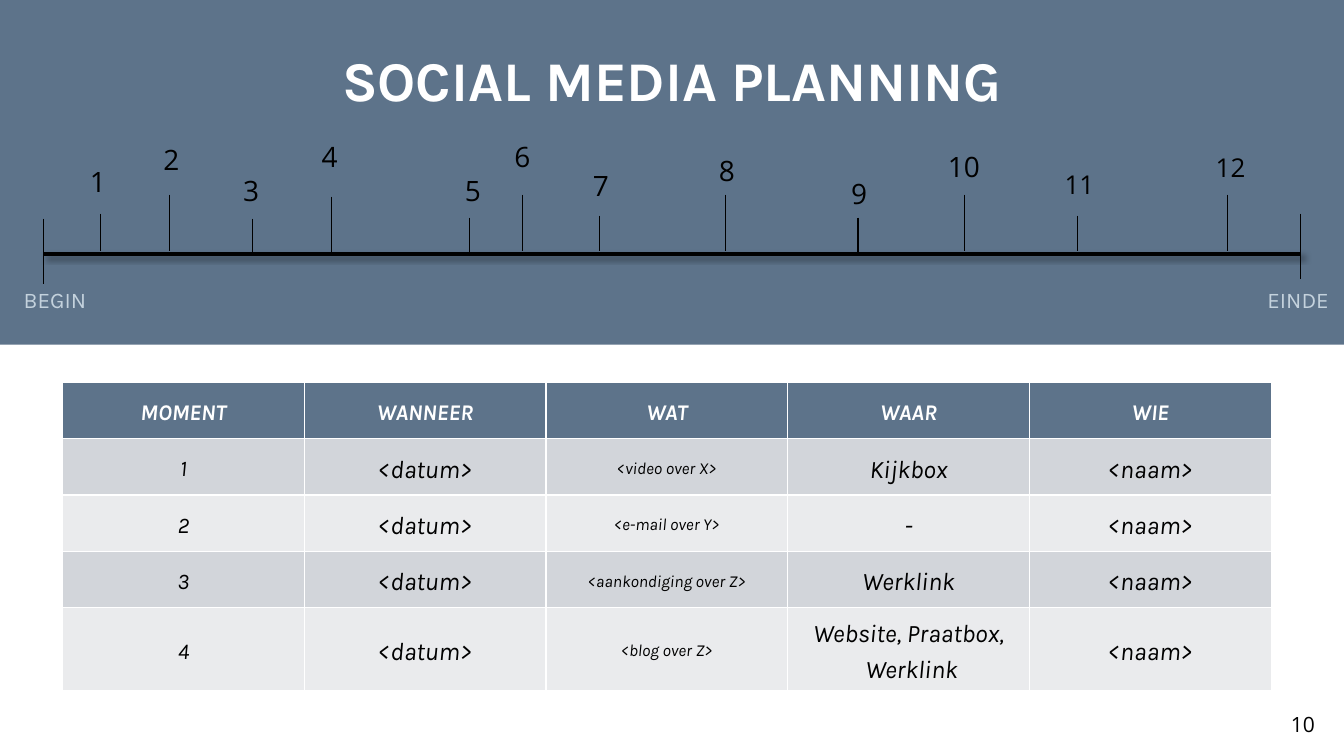
from lxml import etree
from pptx import Presentation
from pptx.dml.color import RGBColor
from pptx.enum.shapes import MSO_CONNECTOR, MSO_SHAPE
from pptx.enum.text import MSO_ANCHOR, PP_ALIGN
from pptx.oxml import parse_xml
from pptx.oxml.ns import nsdecls, qn
from pptx.util import Inches, Pt

SLATE, WHITE, BLACK, PALE = "5D738A", "FFFFFF", "000000", "C4D2DD"
ROW_FILLS = ["D2D5DA", "EAEBED"]
TITLE = "SOCIAL MEDIA PLANNING"
AXIS_Y, AXIS_LEFT, AXIS_RIGHT = 2.52, 0.43, 12.9
END_MARKS = [("EINDE", AXIS_RIGHT, 2.12, 12.37), ("BEGIN", AXIS_LEFT, 2.17, 0.04)]
END_MARK_HEIGHT = 0.65

# tick x, tick top, tick bottom, label left, label top; numbered from 1
MOMENTS = [
    (1.00, 2.12, 2.49, 0.81, 1.70),
    (1.68, 1.93, 2.49, 1.54, 1.48),
    (2.50, 2.17, 2.52, 2.33, 1.79),
    (3.29, 1.95, 2.52, 3.11, 1.45),
    (4.66, 2.16, 2.51, 4.53, 1.79),
    (5.18, 1.93, 2.49, 5.02, 1.45),
    (5.95, 2.14, 2.49, 5.80, 1.74),
    (7.20, 1.93, 2.49, 7.05, 1.59),
    (8.51, 2.16, 2.51, 8.36, 1.82),
    (9.57, 1.93, 2.49, 9.24, 1.52),
    (10.69, 2.14, 2.49, 10.40, 1.76),
    (12.17, 1.93, 2.49, 11.90, 1.59),
]
# label width, height, text size, line spacing
DIGIT_LABEL = (0.18, 0.27, 20, 0.8)
WIDE_LABELS = {10: (0.5, 0.32, 20, 0.9), 11: (0.47, 0.25, 18.5, 0.7), 12: (0.47, 0.25, 18.5, 0.7)}

HEADERS = ["MOMENT", "WANNEER", "WAT", "WAAR", "WIE"]
POSTS = [
    ("1", "<datum>", "<video over X>", "Kijkbox", "<naam>"),
    ("2", "<datum>", "<e-mail over Y>", "-", "<naam>"),
    ("3", "<datum>", "<aankondiging over Z>", "Werklink", "<naam>"),
    ("4", "<datum>", "<blog over Z>", "Website, Praatbox, Werklink", "<naam>"),
]
COLUMN_SIZES = [16, 18, 12, 18, 18]
ROW_HEIGHTS = [0.56, 0.56, 0.56, 0.56, 0.66]


def rgb(color):
    return RGBColor.from_string(color)


def format_text(frame, size, color, font="Karla", bold=False, italic=False,
                align=PP_ALIGN.CENTER, spacing=1.0, indent=0, hanging=0):
    """Format the single paragraph of a text frame; indents are in inches."""
    para = frame.paragraphs[0]
    para.alignment = align
    para.line_spacing = spacing
    para.space_before = Pt(0)
    properties = para._p.get_or_add_pPr()
    properties.set("marL", str(Inches(indent)))
    properties.set("indent", str(Inches(hanging)))
    for span in para.runs:
        span.font.name = font
        span.font.size = Pt(size)
        span.font.bold = bold
        span.font.italic = italic
        span.font.color.rgb = rgb(color)


def set_margins(frame, side, top):
    frame.margin_left = frame.margin_right = Inches(side)
    frame.margin_top = frame.margin_bottom = Inches(top)


def add_text(page, text, left, top, width, height, margins=(0, 0), **style):
    box = page.shapes.add_textbox(Inches(left), Inches(top), Inches(width), Inches(height))
    frame = box.text_frame
    frame.word_wrap = True
    set_margins(frame, *margins)
    frame.text = text
    format_text(frame, **style)


def add_line(page, x1, y1, x2, y2, width=0.75):
    """Add a black line and return its empty effect list."""
    line = page.shapes.add_connector(
        MSO_CONNECTOR.STRAIGHT, Inches(x1), Inches(y1), Inches(x2), Inches(y2))
    line.line.color.rgb = rgb(BLACK)
    line.line.width = Pt(width)
    return etree.SubElement(line._element.spPr, qn("a:effectLst"))


def add_heading(page):
    band = page.shapes.add_shape(MSO_SHAPE.RECTANGLE, 0, 0, Inches(13.33), Inches(3.42))
    band.shadow.inherit = False
    band.fill.solid()
    band.fill.fore_color.rgb = rgb(SLATE)
    band.line.fill.background()
    title = page.shapes.title
    title._element.addprevious(band._element)
    title.left, title.top, title.width, title.height = map(Inches, (0, 0.27, 13.33, 0.91))
    frame = title.text_frame
    frame.text = TITLE
    frame.vertical_anchor = MSO_ANCHOR.TOP
    set_margins(frame, 0.05, 0.05)
    format_text(frame, 40, WHITE, bold=True, spacing=1.2, indent=0.06, hanging=-0.06)


def add_timeline(page):
    effects = add_line(page, AXIS_LEFT, AXIS_Y, AXIS_RIGHT, AXIS_Y, 3)
    effects.append(parse_xml(
        f'<a:outerShdw {nsdecls("a")} blurRad="{Pt(4)}" dist="{Pt(3)}" dir="2700000">'
        f'<a:srgbClr val="{BLACK}"><a:alpha val="40000"/></a:srgbClr></a:outerShdw>'))
    for text, x, top, label_left in END_MARKS:
        add_line(page, x, top, x, top + END_MARK_HEIGHT)
        add_text(page, text, label_left, 2.87, 0.87, 0.29,
                 size=16, color=PALE, spacing=0.9, indent=0.14)
    for number, (x, top, bottom, label_left, label_top) in enumerate(MOMENTS, 1):
        add_line(page, x, top, x, bottom)
        width, height, size, spacing = WIDE_LABELS.get(number, DIGIT_LABEL)
        add_text(page, str(number), label_left, label_top, width, height, size=size,
                 color=BLACK, font="Open Sans", spacing=spacing, indent=0.14)


def add_planning(page):
    rows = [HEADERS, *POSTS]
    table = page.shapes.add_table(
        len(rows), len(HEADERS), Inches(0.62), Inches(3.79),
        Inches(11.99), Inches(sum(ROW_HEIGHTS))).table
    for row, height in zip(table.rows, ROW_HEIGHTS):
        row.height = Inches(height)
    for r, texts in enumerate(rows):
        header = r == 0
        for c, text in enumerate(texts):
            cell = table.cell(r, c)
            cell.fill.solid()
            cell.fill.fore_color.rgb = rgb(SLATE if header else ROW_FILLS[(r - 1) % 2])
            cell.vertical_anchor = MSO_ANCHOR.MIDDLE
            cell.text_frame.text = text
            format_text(cell.text_frame, 16 if header else COLUMN_SIZES[c],
                        WHITE if header else BLACK, bold=header, italic=True,
                        spacing=1.2, indent=0.06, hanging=-0.06)


def main():
    deck = Presentation()
    deck.slide_width, deck.slide_height = Inches(13.33), Inches(7.5)
    page = deck.slides.add_slide(deck.slide_layouts[5])
    add_heading(page)
    add_timeline(page)
    add_planning(page)
    add_text(page, "10", 12.42, 7.02, 0.75, 0.32, margins=(0.13, 0.07), size=15,
             color=BLACK, font="Open Sans", align=PP_ALIGN.RIGHT, spacing=0.9)
    deck.save("out.pptx")


if __name__ == "__main__":
    main()
